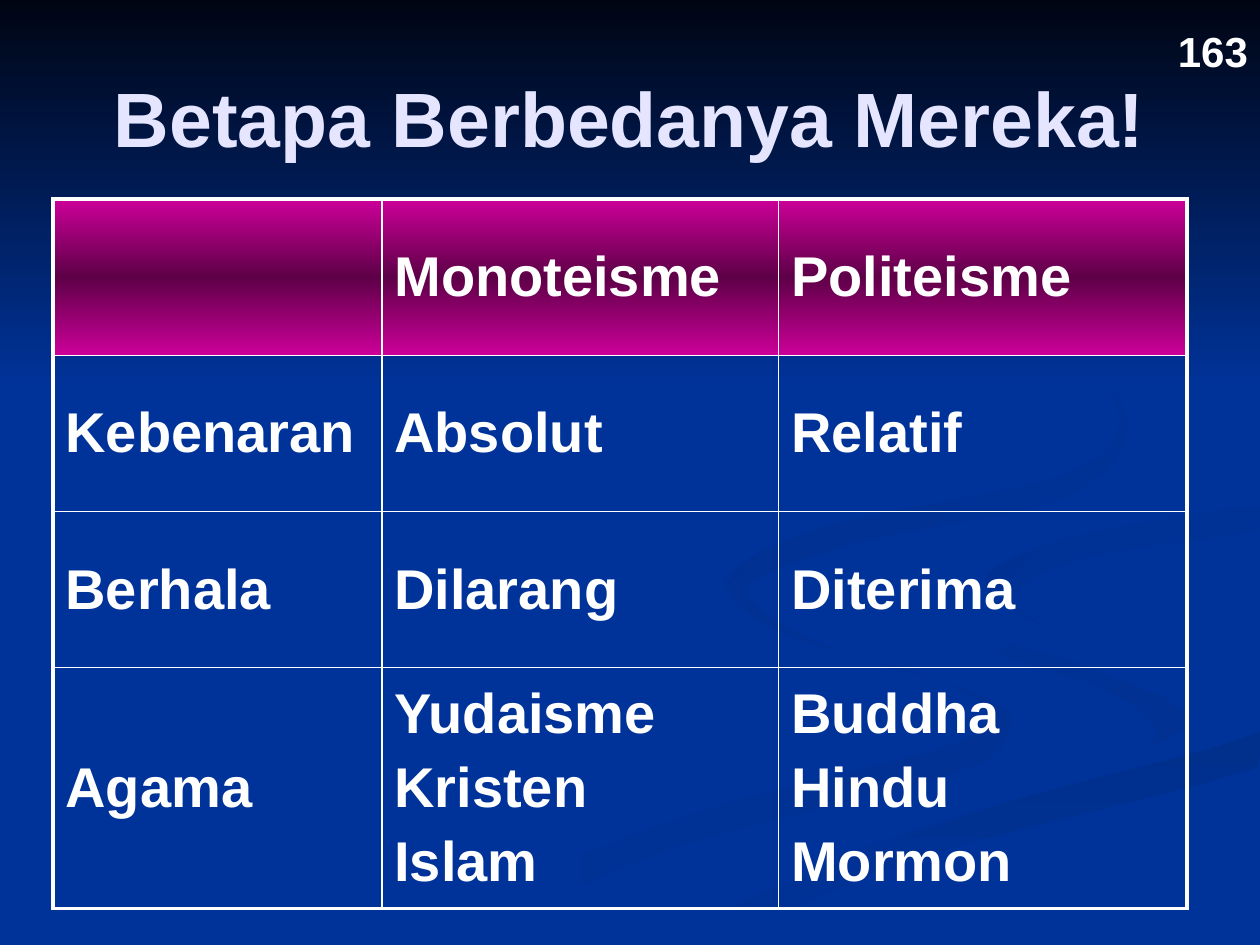
from pptx import Presentation
from pptx.dml.color import RGBColor
from pptx.enum.text import MSO_ANCHOR, PP_ALIGN
from pptx.oxml import parse_xml
from pptx.util import Inches, Pt

COLORS = {
    "blue": "003399", "night": "000514", "title": "E5E5FF", "white": "FFFFFF",
    "pink": "CC0099", "plum": "5E0047",
    "shade1": "003193", "shade2": "002F8C", "shade3": "003091", "shade4": "002F8E",
}
FONT = "Arial"
NS = 'xmlns:a="http://schemas.openxmlformats.org/drawingml/2006/main"'

ROWS = [
    ["", "Monoteisme", "Politeisme"],
    ["Kebenaran", "Absolut", "Relatif"],
    ["Berhala", "Dilarang", "Diterima"],
    ["Agama", "Yudaisme\nKristen\nIslam", "Buddha\nHindu\nMormon"],
]
COLUMN_WIDTHS = [2.61, 3.15, 3.24]
ROW_HEIGHTS = [1.24, 1.24, 1.24, 1.91]

# Ribbons: points on the outline in inches, gradient colours, angle
RIBBONS = [
    ([(7.81, 5.53), (6.42, 5.07), (5.75, 4.59), (6.11, 4.99), (7.62, 5.47),
      (7.67, 5.87), (5.39, 6.49), (3, 7.49), (3.61, 7.49), (5.32, 6.74),
      (7.56, 6.14), (8, 5.81)], ("blue", "shade1"), 0),
    ([(9.43, 5.7), (8.88, 5.35), (7.58, 4.98), (7.24, 4.64), (7.55, 5.05),
      (8.8, 5.49), (9.18, 5.81), (8.94, 6.05), (9.32, 5.89)],
     ("blue", "shade1"), 45),
    ([(5.03, 7.49), (5.71, 7.49), (7.22, 6.82), (9.98, 6.09), (9.98, 5.81),
      (7.64, 6.47), (5.99, 7.06)], ("shade2", "blue"), 90),
    ([(7.25, 4.64), (8.51, 5.24), (9.43, 5.7), (8.43, 6.18), (4.77, 7.49),
      (5.03, 7.49), (7.65, 6.47), (9.99, 5.81), (9.99, 5.38), (8.32, 4.98),
      (7.82, 4.6), (8.65, 4.24), (9.99, 4.02), (9.99, 3.87), (7.88, 4.22)],
     ("blue", "blue"), 0),
    ([(7.81, 4.6), (8.26, 4.96), (8.05, 4.72), (8.59, 4.43), (9.98, 4.2),
      (9.98, 4.02), (8.49, 4.27)], ("shade3", "blue"), 45),
    ([(6.83, 4.3), (8.41, 3.96), (8.94, 3.44), (8.64, 2.91), (7.62, 2.33),
      (8.55, 2.85), (8.89, 3.35), (8.42, 3.78), (6.49, 4.2), (5.77, 4.62),
      (6.22, 5), (5.94, 4.65)], ("shade4", "blue"), 45),
]


def smooth_outline(points, steps=5):
    """Closed Catmull-Rom curve through the points."""
    curve = []
    count = len(points)
    for i in range(count):
        corners = [points[(i + k) % count] for k in (-1, 0, 1, 2)]
        for step in range(steps):
            t = step / steps
            curve.append(tuple(
                b + t * (c - a + t * (2 * a - 5 * b + 4 * c - d
                                      + t * (3 * (b - c) + d - a))) / 2
                for a, b, c, d in zip(*corners)))
    return curve


def gradient(names, angle):
    step = 100000 // (len(names) - 1)
    stops = "".join(
        f'<a:gs pos="{i * step}"><a:srgbClr val="{COLORS[name]}"/></a:gs>'
        for i, name in enumerate(names))
    return parse_xml(f'<a:gradFill {NS} rotWithShape="1"><a:gsLst>{stops}</a:gsLst>'
                     f'<a:lin ang="{angle * 60000}" scaled="0"/></a:gradFill>')


def style_text(para, size, color="white"):
    for span in para.runs:
        span.font.name = FONT
        span.font.size = Pt(size)
        span.font.bold = True
        span.font.color.rgb = RGBColor.from_string(COLORS[color])


def draw_outline(page, points, names, angle):
    corners = [(Inches(min(x, 10)), Inches(min(y, 7.5))) for x, y in points]
    builder = page.shapes.build_freeform(*corners[0])
    builder.add_line_segments(corners[1:], close=True)
    shape = builder.convert_to_shape()
    shape.shadow.inherit = False
    shape.line.fill.background()
    shape.fill.background()
    no_fill = shape._element.spPr.find("{*}noFill")
    no_fill.getparent().replace(no_fill, gradient(names, angle))


def add_background(page):
    fill = page.background.fill
    fill.solid()
    fill.fore_color.rgb = RGBColor.from_string(COLORS["blue"])
    for points, names, angle in RIBBONS:
        draw_outline(page, smooth_outline(points), names, angle)
    # Dark sky fading down into the blue
    sky = [(0, 0), (0, 3.08), (10, 3.08), (10, 0)]
    draw_outline(page, sky, ("night", "blue"), 90)


def add_title(page, left, top, width, height):
    title = page.shapes.title
    title.left, title.top, title.width, title.height = left, top, width, height
    frame = title.text_frame
    frame.text = "Betapa Berbedanya Mereka!"
    frame.vertical_anchor = MSO_ANCHOR.MIDDLE
    frame.paragraphs[0].alignment = PP_ALIGN.CENTER
    style_text(frame.paragraphs[0], 44, "title")
    # Bring the title in front of the background
    title._element.getparent().append(title._element)


def set_borders(cell, outer_sides):
    properties = cell._tc.get_or_add_tcPr()
    for side in "LRTB":
        width = Pt(2.25 if side in outer_sides else 1)
        properties.append(parse_xml(
            f'<a:ln{side} {NS} w="{width}"><a:solidFill>'
            f'<a:srgbClr val="{COLORS["white"]}"/></a:solidFill></a:ln{side}>'))


def add_comparison(page, left, top, width, height):
    table = page.shapes.add_table(
        len(ROWS), len(COLUMN_WIDTHS), left, top, width, height).table
    table.horz_banding = False
    for column, size in zip(table.columns, COLUMN_WIDTHS):
        column.width = Inches(size)
    for row, size in zip(table.rows, ROW_HEIGHTS):
        row.height = Inches(size)
    last_row, last_column = len(ROWS) - 1, len(COLUMN_WIDTHS) - 1
    for r, texts in enumerate(ROWS):
        for c, text in enumerate(texts):
            cell = table.cell(r, c)
            cell.text = text
            cell.vertical_anchor = MSO_ANCHOR.MIDDLE
            edges = {"L": c == 0, "R": c == last_column,
                     "T": r == 0, "B": r == last_row}
            set_borders(cell, [side for side, outer in edges.items() if outer])
            if r == 0:
                cell._tc.tcPr.append(gradient(("pink", "plum", "pink"), 90))
            else:
                cell.fill.background()
            for para in cell.text_frame.paragraphs:
                para._p.get_or_add_pPr().append(parse_xml(
                    f'<a:spcBef {NS}><a:spcPct val="20000"/></a:spcBef>'))
                style_text(para, 32)


def add_page_number(page, left, top, width, height):
    box = page.shapes.add_textbox(left, top, width, height)
    box.text_frame.word_wrap = False
    box.text_frame.text = "163"
    style_text(box.text_frame.paragraphs[0], 24)


def main():
    deck = Presentation()
    deck.slide_width, deck.slide_height = Inches(10), Inches(7.5)
    page = deck.slides.add_slide(deck.slide_layouts[5])
    add_background(page)
    add_title(page, Inches(0.5), Inches(0.3), Inches(9), Inches(1.25))
    add_comparison(page, Inches(0.42), Inches(1.58), Inches(9), Inches(5.63))
    add_page_number(page, Inches(9.25), Inches(0.15), Inches(0.76), Inches(0.51))
    deck.save("out.pptx")


if __name__ == "__main__":
    main()
